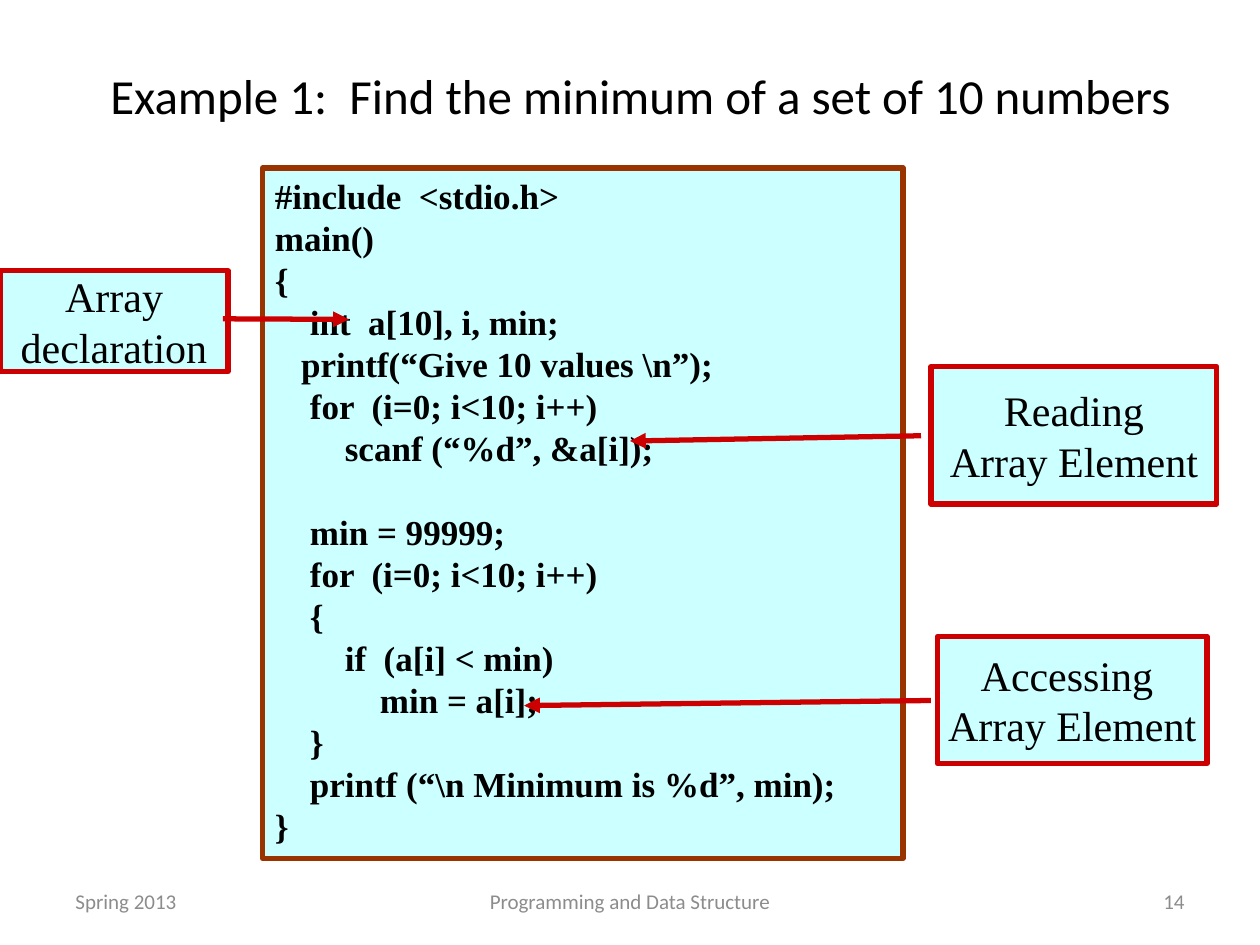
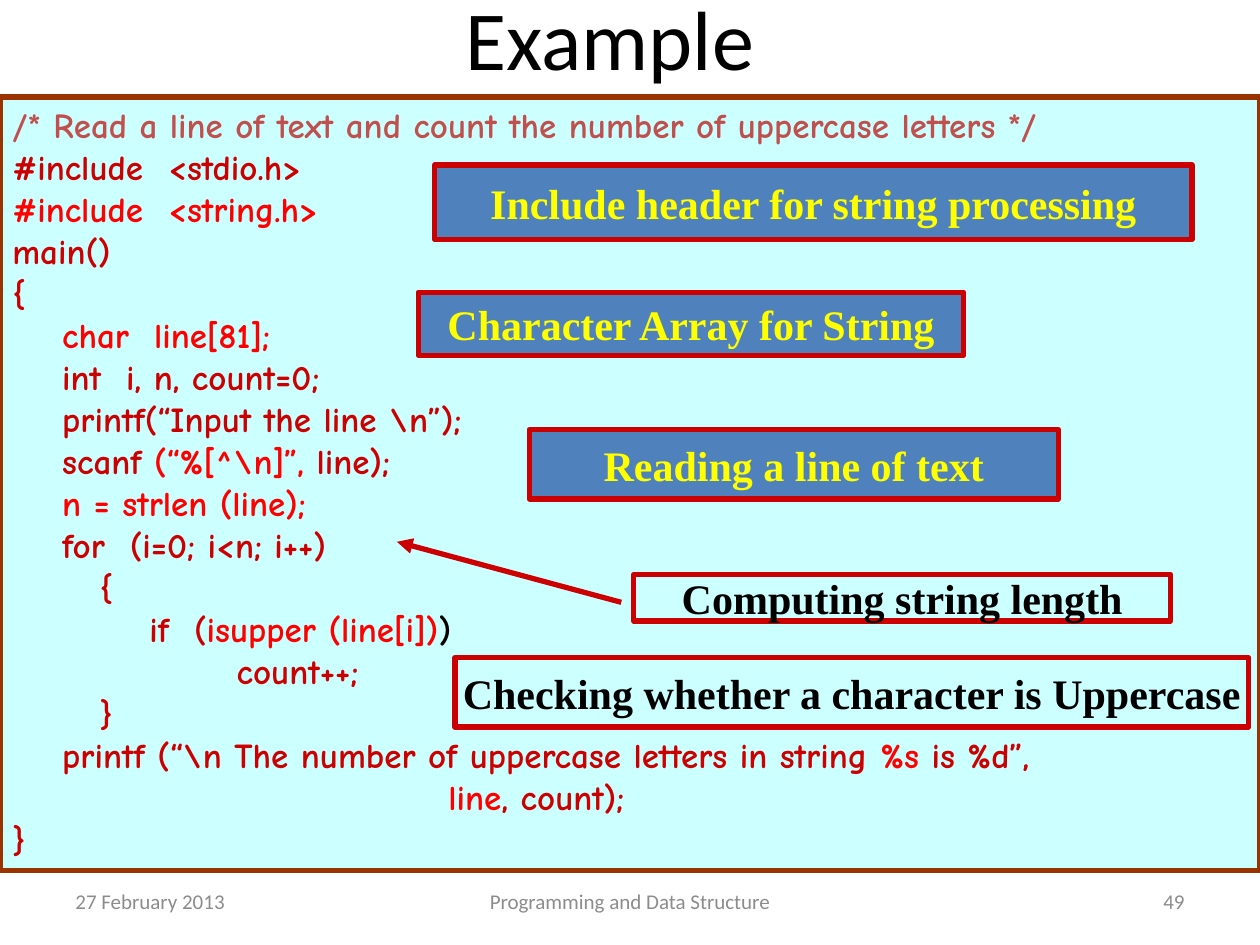
from lxml import etree
from pptx import Presentation
from pptx.dml.color import RGBColor
from pptx.enum import shapes, text
from pptx.oxml import ns
from pptx.util import Pt

rgb = RGBColor.from_string
BLACK, GREY, YELLOW = "000000", "8C8C8C", "FFFF00"
CYAN, BLUE, BROWN = "CCFFFF", "4F81BD", "993300"
CRIMSON, RED, ROSE = "CC0000", "FF0000", "C0504D"
SERIF, SANS, COMIC = "Times New Roman", "Calibri", "Comic Neue"
LEFT, MID, RIGHT = text.PP_ALIGN.LEFT, text.PP_ALIGN.CENTER, text.PP_ALIGN.RIGHT


def ink(font, face, size, color, bold=False):
    font.name, font.size, font.bold = face, Pt(size), bold
    font.color.rgb = rgb(color)


def box(page, place, lines, face, size, bold, align, fill=None, edge=None):
    """Draw a text block; each line is (left indent, (words, colour), ...)."""
    place = [Pt(v) for v in place]
    if fill:
        item = page.shapes.add_shape(shapes.MSO_SHAPE.RECTANGLE, *place)
        item.shadow.inherit = False
        item.fill.solid()
        item.fill.fore_color.rgb = rgb(fill)
        item.line.color.rgb = rgb(edge)
        item.line.width = Pt(3)
    else:
        item = page.shapes.add_textbox(*place)
    frame = item.text_frame
    frame.word_wrap = True
    frame.vertical_anchor = text.MSO_ANCHOR.MIDDLE
    for n, (indent, *parts) in enumerate(lines):
        para = frame.add_paragraph() if n else frame.paragraphs[0]
        para.alignment = align
        if indent:
            para._p.get_or_add_pPr().set("marL", str(Pt(indent)))
        for words, color in parts:
            run = para.add_run()
            run.text = words
            ink(run.font, face, size, color, bold)
    return frame


# Code listings: depth in spaces, then the words
minimum = [
    (0, "#include  <stdio.h>"),
    (0, "main()"),
    (0, "{"),
    (4, "int  a[10], i, min;"),
    (3, r"printf(“Give 10 values \n”);"),
    (4, "for  (i=0; i<10; i++)"),
    (8, "scanf (“%d”, &a[i]);"),
    (4, "min = 99999;"),
    (4, "for  (i=0; i<10; i++)"),
    (4, "{"),
    (8, "if  (a[i] < min)"),
    (12, "min = a[i];"),
    (4, "}"),
    (4, r"printf (“\n Minimum is %d”, min);"),
    (0, "}"),
]
minimum = [(depth, (words, BLACK)) for depth, words in minimum]
upper = [
    (0, ("/* Read a line of text and count the number of uppercase letters */", ROSE)),
    (0, ("#include  <stdio.h>", CRIMSON)),
    (0, ("#include  <string.h>", RED)),
    (0, ("main()", CRIMSON)),
    (0, ("{", CRIMSON)),
    (4, ("char  line[81];", RED)),
    (4, ("int  i, n, count=0;", CRIMSON)),
    (4, (r"printf(“Input the line \n”);", CRIMSON)),
    (4, ("scanf ", CRIMSON), (r"(“%[^\n]”,", RED), (" line);", CRIMSON)),
    (4, ("n = strlen (line);", RED)),
    (4, ("for  (i=0; i<n; i++)", CRIMSON)),
    (7, ("{", CRIMSON)),
    (11, ("if  (", CRIMSON), ("isupper (line[i])", RED), (")", BLACK)),
    (18, ("count++;", CRIMSON)),
    (7, ("}", CRIMSON)),
    (4, (r"printf (“\n The number of uppercase letters in string ", CRIMSON),
     ("%s", RED), (" is %d”,", CRIMSON)),
    (35, ("line", RED), (", count);", CRIMSON)),
    (0, ("}", CRIMSON)),
]

# Callouts: place, lines, text colour, fill
notes1 = [
    ((0, 154.8, 130.3, 57.6), ["Array", "declaration"], BLACK, CYAN),
    ((535.7, 363.6, 154, 72.7), ["Accessing ", "Array Element"], BLACK, CYAN),
    ((532, 209.5, 163.4, 78.5), ["Reading", "Array Element"], BLACK, CYAN),
]
notes2 = [
    ((248.4, 94.3, 432.7, 42.5), ["Include header for string processing"], YELLOW, BLUE),
    ((239, 167, 311.8, 36), ["Character Array for String"], YELLOW, BLUE),
    ((302.4, 245.5, 302.4, 39.6), ["Reading a line of text"], YELLOW, BLUE),
    ((362.2, 328.3, 306.7, 26.6), ["Computing string length"], BLACK, CYAN),
    ((260, 375.8, 453.6, 39.6), ["Checking whether a character is Uppercase"], BLACK, CYAN),
]
arrows1 = [(127.4, 182.2, 199.4, 182.5), (532, 400.3, 299.5, 403.2),
           (526.3, 249, 360, 252)]
arrows2 = [(355, 344.2, 226.8, 309.6)]

# Slides: title, its size and place; code, its face, space width and place;
# callouts, their weight, arrows; date and number
pages = [
    ("Example 1:  Find the minimum of a set of 10 numbers", 28, (36, 24, 660, 60),
     minimum, SERIF, 5, (150, 96, 366, 394.5), notes1, False, arrows1,
     "Spring 2013", "14"),
    ("Example ", 48, (48, 0, 612, 42),
     upper, COMIC, 7.12, (0, 55.4, 720, 442), notes2, True, arrows2,
     "27 February 2013", "49"),
]

deck = Presentation()
deck.slide_width, deck.slide_height = Pt(720), Pt(540)

for (head, size, spot, code, face, space, area,
     notes, bold, arrows, date, number) in pages:
    page = deck.slides.add_slide(deck.slide_layouts[5])

    # Title
    title = page.shapes.title
    title.left, title.top, title.width, title.height = [Pt(v) for v in spot]
    frame = title.text_frame
    frame.text = head
    frame.auto_size = text.MSO_AUTO_SIZE.NONE
    frame.vertical_anchor = text.MSO_ANCHOR.MIDDLE
    frame.paragraphs[0].alignment = MID
    ink(frame.paragraphs[0].runs[0].font, SANS, size, BLACK)

    # Footer
    for left, width, words, align in [
            (36, 168, date, LEFT),
            (246, 228, "Programming and Data Structure", MID),
            (516, 168, number, RIGHT)]:
        box(page, (left, 500.4, width, 28.8), [(0, (words, GREY))],
            SANS, 12, False, align)

    # Code panel
    lines = [(depth * space, *parts) for depth, *parts in code]
    panel = box(page, area, lines, face, 20, True, LEFT, CYAN, BROWN)
    panel.vertical_anchor = text.MSO_ANCHOR.TOP
    if code is minimum:
        panel.paragraphs[7].space_before = Pt(24)

    # Callouts
    for place, rows, color, fill in notes:
        lines = [(0, (words, color)) for words in rows]
        note = box(page, place, lines, SERIF, 24, bold, MID, fill, CRIMSON)
        note.word_wrap = False

    # Arrows
    for ends in arrows:
        arrow = page.shapes.add_connector(
            shapes.MSO_CONNECTOR.STRAIGHT, *[Pt(v) for v in ends])
        arrow.line.color.rgb = rgb(CRIMSON)
        arrow.line.width = Pt(3)
        props = arrow._element.spPr
        etree.SubElement(props.find(ns.qn("a:ln")), ns.qn("a:tailEnd"), type="triangle")
        etree.SubElement(props, ns.qn("a:effectLst"))

deck.save("out.pptx")
